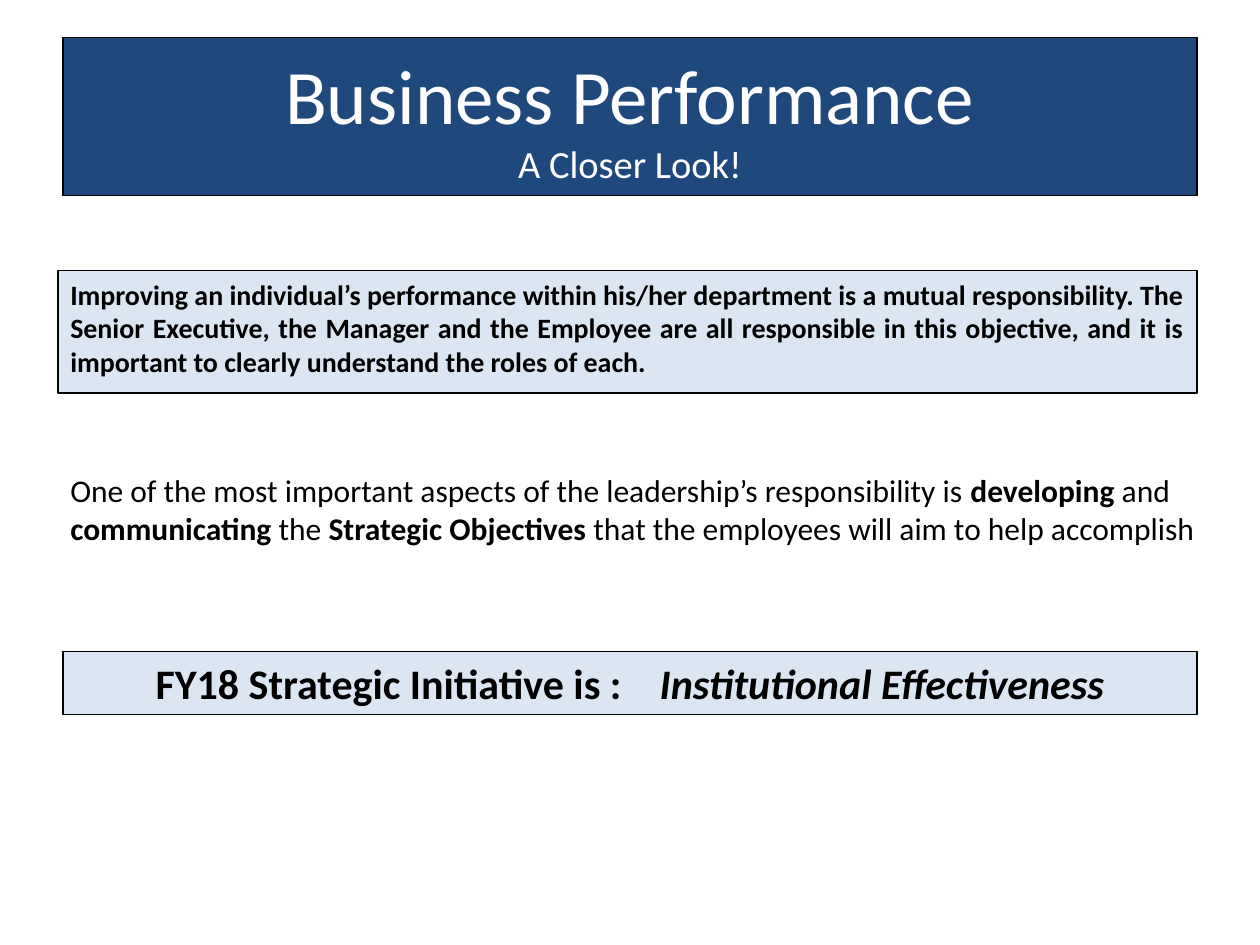
"""Build the Business Performance slide."""
from pptx import Presentation
from pptx.dml.color import RGBColor
from pptx.enum.shapes import MSO_SHAPE
from pptx.enum.text import MSO_ANCHOR, PP_ALIGN
from pptx.util import Inches, Pt

COLORS = {"navy": "1F497D", "pale": "DCE6F2", "black": "000000", "white": "FFFFFF"}


def add_panel(left, top, width, height, fill):
    panel = slide.shapes.add_shape(
        MSO_SHAPE.RECTANGLE, Inches(left), Inches(top), Inches(width), Inches(height)
    )
    panel.shadow.inherit = False
    panel.fill.solid()
    panel.fill.fore_color.rgb = RGBColor.from_string(COLORS[fill])
    panel.line.color.rgb = RGBColor.from_string(COLORS["black"])
    panel.line.width = Pt(0.75)
    return panel


def write(holder, pieces, align, color="black", anchor=MSO_ANCHOR.TOP):
    frame = holder.text_frame
    frame.word_wrap = True
    frame.vertical_anchor = anchor
    paragraph = frame.paragraphs[0]
    paragraph.text = "".join(text for text, *_ in pieces) if len(pieces) == 1 else ""
    paragraph.alignment = align
    for text, size, bold, italic in pieces:
        if text.startswith("\n"):
            paragraph.add_line_break()
        run = paragraph.runs[0] if len(pieces) == 1 else paragraph.add_run()
        run.text = text.lstrip("\n")
        run.font.name = "Calibri"
        run.font.size = Pt(size)
        run.font.bold = bold
        run.font.italic = italic
        run.font.color.rgb = RGBColor.from_string(COLORS[color])
    return paragraph


presentation = Presentation()
presentation.slide_width = Inches(10)
presentation.slide_height = Inches(7.5)
slide = presentation.slides.add_slide(presentation.slide_layouts[6])

title = add_panel(0.5, 0.3, 9, 1.25, "navy")
heading = [
    ("Business Performance", 44, False, False),
    ("\nA Closer Look!", 22, False, False),
]
write(title, heading, PP_ALIGN.CENTER, "white", MSO_ANCHOR.MIDDLE)

responsibility = add_panel(0.46, 2.15, 9.04, 0.97, "pale")
shared_roles = (
    "Improving an individual’s performance within his/her department is a mutual "
    "responsibility. The Senior Executive, the Manager and the Employee are all "
    "responsible in this objective, and it is important to clearly understand the "
    "roles of each."
)
roles = write(responsibility, [(shared_roles, 16, True, False)], PP_ALIGN.JUSTIFY)
roles.space_before = Pt(3.2)

leadership = slide.shapes.add_textbox(
    Inches(0.46), Inches(3.69), Inches(9.17), Inches(1.01)
)
aspects = [
    ("One of the most important aspects of the leadership’s responsibility is ", False),
    ("developing", True),
    (" and ", False),
    ("communicating", True),
    (" the ", False),
    ("Strategic Objectives ", True),
    ("that the employees will aim to help accomplish", False),
]
write(leadership, [(text, 18, bold, False) for text, bold in aspects], PP_ALIGN.LEFT)

initiative = add_panel(0.5, 5.17, 9, 0.5, "pale")
goal = [
    ("FY18 Strategic Initiative is : \t", 24, True, False),
    ("Institutional Effectiveness", 24, True, True),
]
write(initiative, goal, PP_ALIGN.CENTER)

presentation.save("out.pptx")
